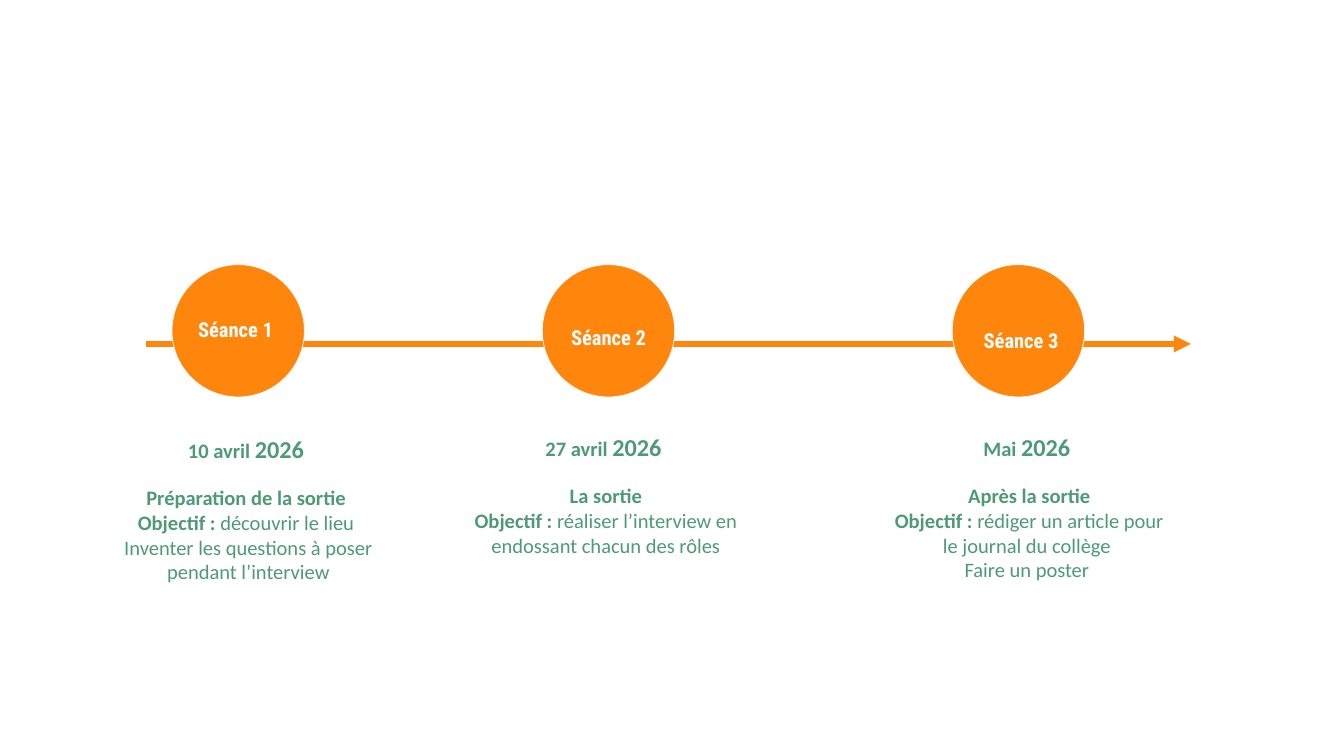
from dataclasses import dataclass

from lxml.etree import SubElement
from pptx import Presentation
from pptx.dml.color import RGBColor
from pptx.enum.shapes import MSO_CONNECTOR, MSO_SHAPE
from pptx.enum.text import MSO_AUTO_SIZE, PP_ALIGN
from pptx.oxml.ns import qn
from pptx.slide import Slide
from pptx.text.text import TextFrame, _Paragraph
from pptx.util import Pt

EMU_PER_PX = 9144  # 100 px to the inch
ORANGE, GREEN, WHITE = "FF860D", "4F9A76", "FFFFFF"
BODY_FONT, LABEL_FONT = "Calibri", "Roboto Condensed"
TEXT_SIZE, YEAR_SIZE = 22, 26
CIRCLE_TOP, CIRCLE_SIZE = 394, 197
TEXT_WIDTH, LABEL_HEIGHT = 425, 37
AXIS_Y, AXIS_START, AXIS_END = 512, 217, 1772


@dataclass
class Session:
    label: str
    label_left: int
    label_top: int
    circle_left: int
    text_left: int
    text_top: int
    text_height: int
    date: str
    heading: str
    goal: str
    extra: str = ""


SESSIONS = [
    Session("Séance 1", 138, 472, 256, 157, 646, 223, "10 avril ",
            "Préparation de la sortie ", "découvrir le lieu ",
            "Inventer les questions à poser pendant l’interview"),
    Session("Séance 2", 693, 484, 807, 689, 643, 187, "27 avril ",
            "La sortie", "réaliser l’interview en endossant chacun des rôles"),
    Session("Séance 3", 1307, 488, 1417, 1319, 643, 223, "Mai ",
            "Après la sortie", "rédiger un article pour le journal du collège ",
            "Faire un poster "),
]


def px(length: int) -> int:
    return length * EMU_PER_PX


def color(hex_code: str) -> RGBColor:
    return RGBColor.from_string(hex_code)


def add_span(para: _Paragraph, text: str, hex_code: str, font_name: str = BODY_FONT,
             size: int = TEXT_SIZE, bold: bool = True) -> None:
    span = para.add_run()
    span.text = text
    span.font.name = font_name
    span.font.size = Pt(size)
    span.font.bold = bold
    span.font.color.rgb = color(hex_code)


def add_text_frame(page: Slide, left: int, top: int, height: int) -> TextFrame:
    box = page.shapes.add_textbox(px(left), px(top), px(TEXT_WIDTH), px(height))
    frame = box.text_frame
    frame.word_wrap = True
    frame.auto_size = MSO_AUTO_SIZE.SHAPE_TO_FIT_TEXT
    frame.margin_left = frame.margin_right = frame.margin_top = frame.margin_bottom = 0
    frame.paragraphs[0].alignment = PP_ALIGN.CENTER
    return frame


def add_centered(frame: TextFrame) -> _Paragraph:
    para = frame.add_paragraph()
    para.alignment = PP_ALIGN.CENTER
    return para


def draw_axis(page: Slide) -> None:
    axis = page.shapes.add_connector(MSO_CONNECTOR.STRAIGHT, px(AXIS_START), px(AXIS_Y),
                                     px(AXIS_END), px(AXIS_Y))
    axis.line.color.rgb = color(ORANGE)
    axis.line.width = Pt(6)
    SubElement(axis.line._get_or_add_ln(), qn("a:tailEnd"), type="triangle")
    SubElement(axis._element.spPr, qn("a:effectLst"))


def draw_circle(page: Slide, session: Session) -> None:
    circle = page.shapes.add_shape(MSO_SHAPE.OVAL, px(session.circle_left), px(CIRCLE_TOP),
                                   px(CIRCLE_SIZE), px(CIRCLE_SIZE))
    circle.shadow.inherit = False
    circle.fill.solid()
    circle.fill.fore_color.rgb = color(ORANGE)
    circle.line.color.rgb = color(WHITE)
    circle.line.width = Pt(0)
    label = add_text_frame(page, session.label_left, session.label_top, LABEL_HEIGHT)
    add_span(label.paragraphs[0], session.label, WHITE, LABEL_FONT)


def draw_description(page: Slide, session: Session) -> None:
    frame = add_text_frame(page, session.text_left, session.text_top, session.text_height)
    date = frame.paragraphs[0]
    add_span(date, session.date, GREEN)
    add_span(date, "2026", GREEN, size=YEAR_SIZE)
    add_span(date, " ", GREEN)

    heading = add_centered(frame)
    heading.space_before = Pt(24)
    add_span(heading, session.heading, GREEN)

    goal = add_centered(frame)
    add_span(goal, "Objectif : ", GREEN)
    add_span(goal, session.goal, GREEN, bold=False)
    if session.extra:
        add_span(add_centered(frame), session.extra, GREEN, bold=False)


def main() -> None:
    deck = Presentation()
    deck.slide_width, deck.slide_height = px(2000), px(1124)
    page = deck.slides.add_slide(deck.slide_layouts[6])

    # Timeline arrow, then the sessions along it
    draw_axis(page)
    for session in SESSIONS:
        draw_circle(page, session)
        draw_description(page, session)

    deck.save("out.pptx")


if __name__ == "__main__":
    main()
